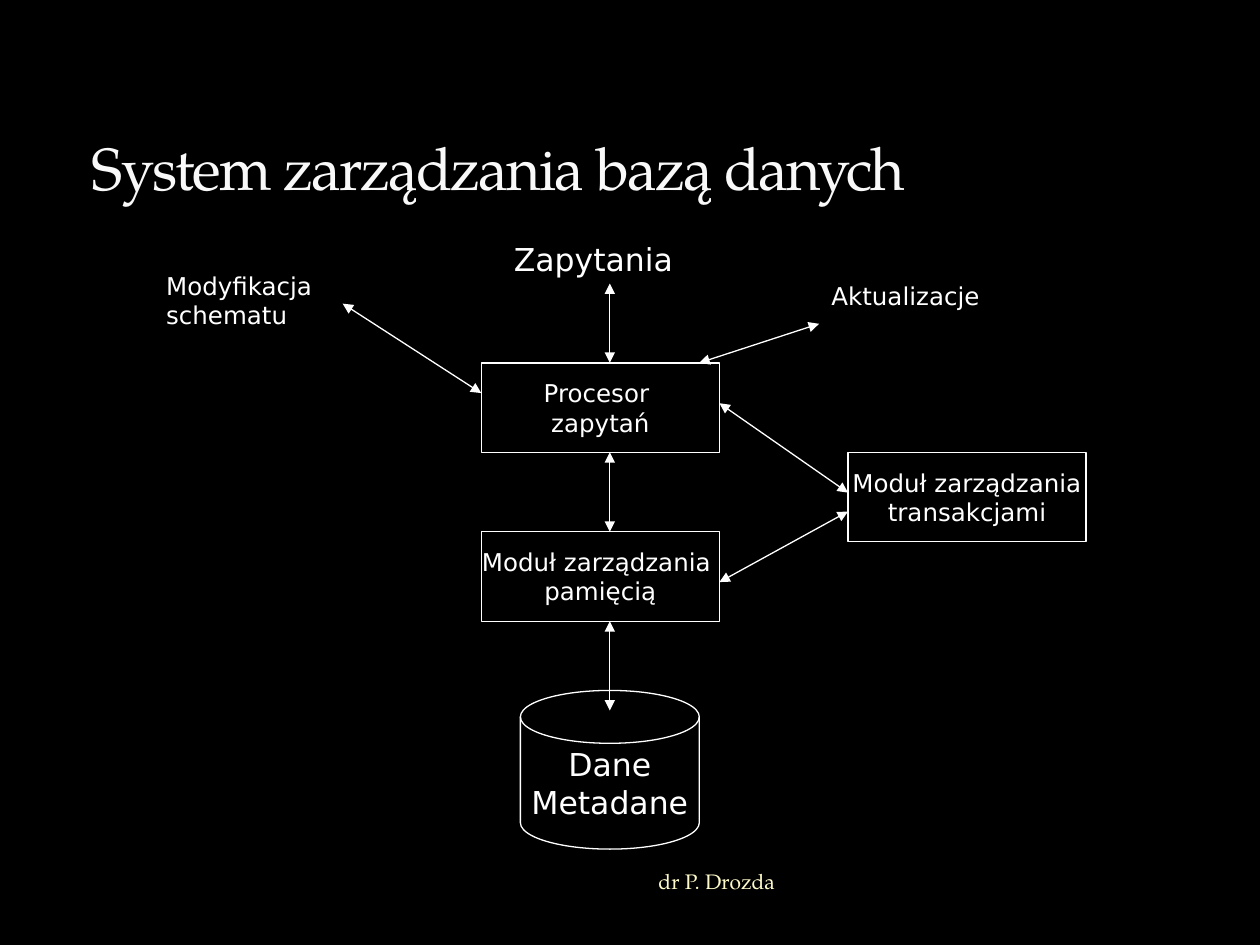
from lxml.etree import SubElement
from pptx import Presentation
from pptx.dml.color import RGBColor
from pptx.enum.shapes import MSO_CONNECTOR, MSO_SHAPE
from pptx.enum.text import MSO_ANCHOR, PP_ALIGN
from pptx.oxml.ns import qn
from pptx.util import Inches, Pt

COLORS = {"background": "000000", "diagram": "FFFFFF", "title": "F9F9F9", "footer": "FEFAC9"}
SERIF, SANS = "TeX Gyre Pagella", "DejaVu Sans"
LINE_WIDTH = Pt(0.75)

# Content: lines of text, position (left, top, width, height), size
TITLE = "System zarządzania bazą danych"
FOOTER = "dr P. Drozda"
PROCESS_SIZE = (1.89, 0.71)
PROCESSES = [
    (["Moduł zarządzania ", "pamięcią"], (3.82, 4.22)),
    (["Procesor ", "zapytań"], (3.82, 2.88)),
    (["Moduł zarządzania", "transakcjami"], (6.73, 3.59)),
]
DATABASE = (["Dane", "Metadane"], (4.13, 5.48, 1.42, 1.26))
LABELS = [
    ("Modyfikacja schematu", (1.22, 2.1, 1.57, 0.57), 14),
    ("Zapytania", (3.98, 1.86, 1.73, 0.4), 18),
    ("Aktualizacje", (6.5, 2.18, 1.73, 0.33), 14),
]
AXIS = 4.84  # x of the vertical arrows
ARROWS = [
    ((AXIS, 2.88), (AXIS, 2.25)),
    ((AXIS, 3.59), (AXIS, 4.22)),
    ((AXIS, 4.93), (AXIS, 5.64)),
    ((5.71, 4.62), (6.73, 4.06)),
    ((6.73, 3.91), (5.71, 3.2)),
    ((3.82, 3.12), (2.72, 2.41)),
    ((5.55, 2.88), (6.5, 2.57)),
]


def color(name):
    return RGBColor.from_string(COLORS[name])


def write(shape, lines, size, font=SANS, ink="diagram", align=PP_ALIGN.LEFT,
          anchor=MSO_ANCHOR.TOP, wrap=True):
    frame = shape.text_frame
    frame.text = "\n".join(lines)
    frame.word_wrap = wrap
    frame.vertical_anchor = anchor
    for paragraph in frame.paragraphs:
        paragraph.alignment = align
        paragraph.font.size = Pt(size)
        paragraph.font.name = font
        paragraph.font.color.rgb = color(ink)


def add_text(slide, text, box, size, **style):
    write(slide.shapes.add_textbox(*map(Inches, box)), [text], size, **style)


def add_node(slide, kind, lines, box, size):
    shape = slide.shapes.add_shape(kind, *map(Inches, box))
    shape.shadow.inherit = False
    shape.fill.solid()
    shape.fill.fore_color.rgb = color("background")
    shape.line.color.rgb = color("diagram")
    shape.line.width = LINE_WIDTH
    write(shape, lines, size, align=PP_ALIGN.CENTER, anchor=MSO_ANCHOR.MIDDLE, wrap=False)


def add_double_arrow(slide, start, end):
    connector = slide.shapes.add_connector(MSO_CONNECTOR.STRAIGHT, *map(Inches, start + end))
    connector.line.color.rgb = color("diagram")
    connector.line.width = LINE_WIDTH
    outline = connector.line._get_or_add_ln()
    for tag in ("a:headEnd", "a:tailEnd"):
        SubElement(outline, qn(tag), type="triangle")
    SubElement(connector._element.spPr, qn("a:effectLst"))


def main():
    presentation = Presentation()
    presentation.slide_width, presentation.slide_height = Inches(10), Inches(7.5)
    slide = presentation.slides.add_slide(presentation.slide_layouts[5])
    slide.background.fill.solid()
    slide.background.fill.fore_color.rgb = color("background")

    # Title, with slightly tightened letters
    title = slide.shapes.title
    title.left, title.top, title.width, title.height = map(Inches, (0.63, 0.33, 9.02, 1.33))
    write(title, [TITLE], 34, font=SERIF, ink="title", anchor=MSO_ANCHOR.BOTTOM)
    title.text_frame.paragraphs[0].runs[0].font._element.set("spc", "-100")

    # Footer
    add_text(slide, FOOTER, (2.33, 6.78, 3.92, 0.42), 12, font=SERIF, ink="footer",
             align=PP_ALIGN.RIGHT, anchor=MSO_ANCHOR.MIDDLE)

    # Database and process boxes
    add_node(slide, MSO_SHAPE.FLOWCHART_MAGNETIC_DISK, *DATABASE, 18)
    for lines, corner in PROCESSES:
        add_node(slide, MSO_SHAPE.FLOWCHART_PROCESS, lines, corner + PROCESS_SIZE, 14)

    # Arrows and the labels of the inputs
    for start, end in ARROWS:
        add_double_arrow(slide, start, end)
    for text, box, size in LABELS:
        add_text(slide, text, box, size)

    presentation.save("out.pptx")


if __name__ == "__main__":
    main()
